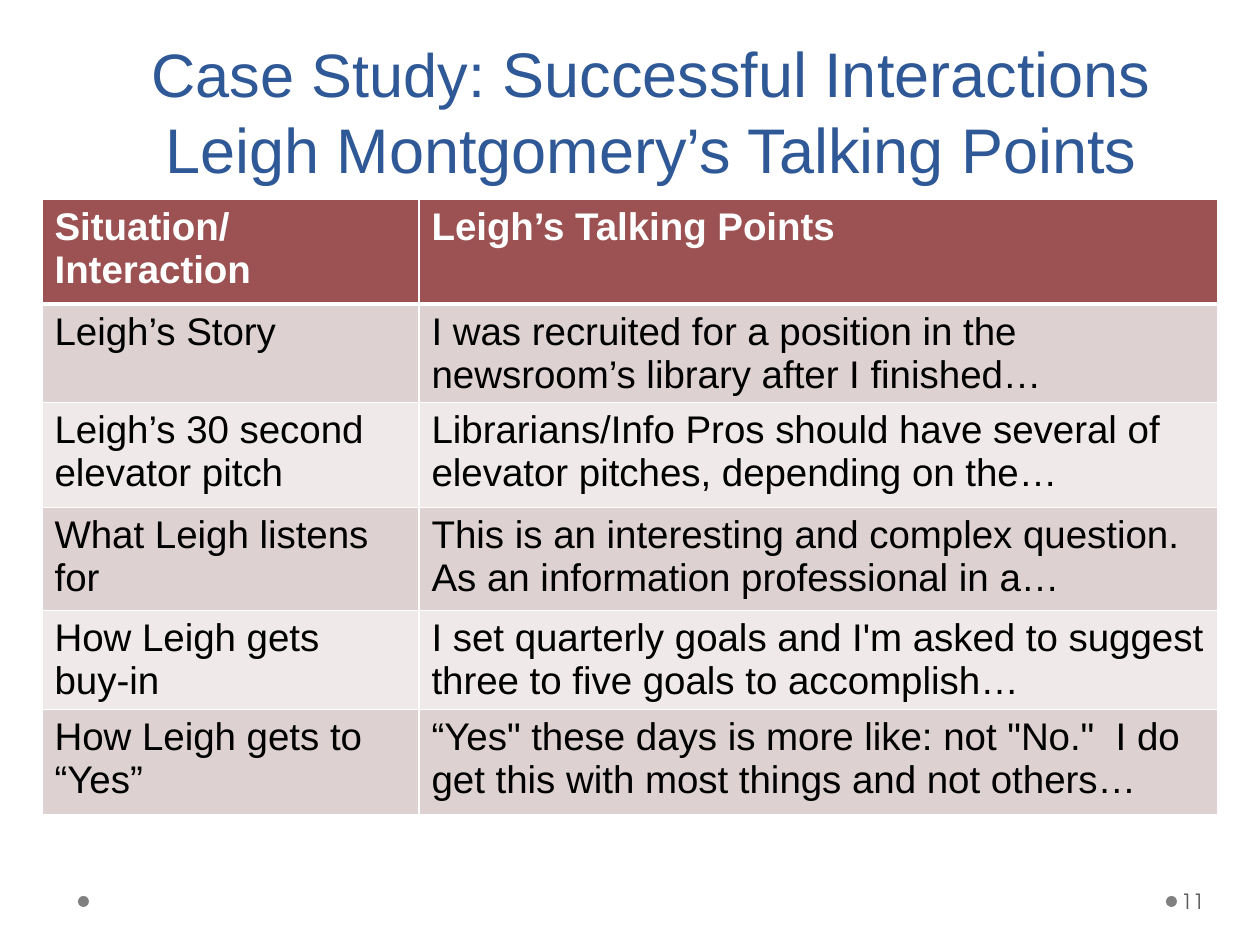
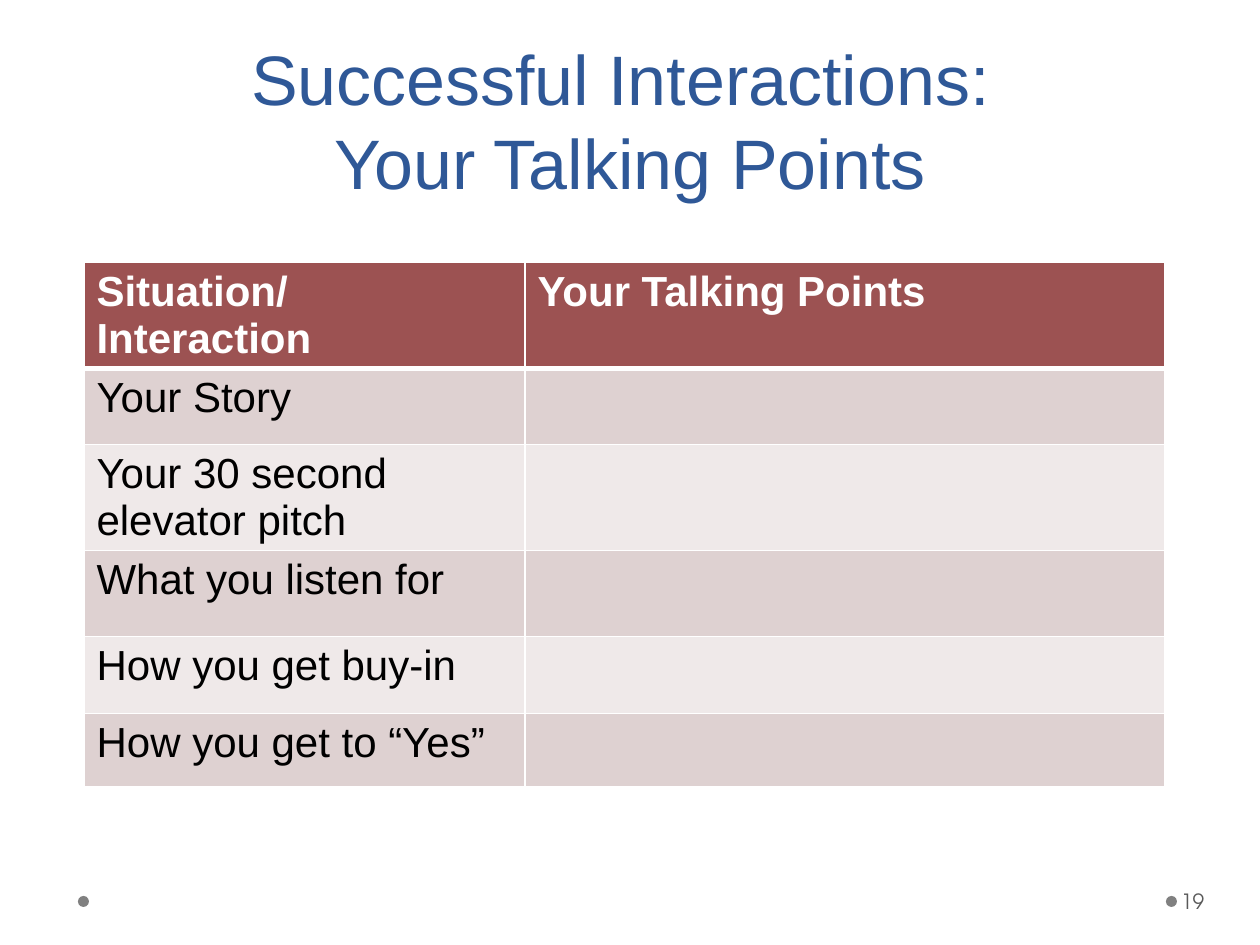
from lxml import etree
from pptx import Presentation
from pptx.dml.color import RGBColor
from pptx.enum.shapes import MSO_SHAPE
from pptx.enum.text import MSO_ANCHOR, MSO_AUTO_SIZE, PP_ALIGN
from pptx.oxml.ns import qn
from pptx.util import Emu, Pt

OVAL = MSO_SHAPE.OVAL
BOTTOM, MIDDLE = MSO_ANCHOR.BOTTOM, MSO_ANCHOR.MIDDLE
CENTER = PP_ALIGN.CENTER
FIXED = MSO_AUTO_SIZE.NONE

BLUE = RGBColor(0x2F, 0x58, 0x97)
RED = RGBColor(0x9C, 0x52, 0x52)
ROSE = RGBColor(0xDE, 0xD1, 0xD1)
PALE = RGBColor(0xEF, 0xE9, 0xE9)
WHITE = RGBColor(0xFF, 0xFF, 0xFF)
BLACK = RGBColor(0, 0, 0)
GREY = RGBColor(0x80, 0x80, 0x80)
DARK = RGBColor(0x59, 0x59, 0x59)

SCALE = 914400 / 126


def px(*nums):
    return [Emu(round(num * SCALE)) for num in nums]


def write(par, text, size=12, color=BLACK, font="Arial", bold=False):
    for index, line in enumerate(text.split("\n")):
        if index:
            par.add_line_break()
        run = par.add_run()
        run.text = line
        run.font.size = Pt(size)
        run.font.name = font
        run.font.bold = bold
        run.font.color.rgb = color


PAGES = [
    {
        "number": "11",
        "title": [("Case Study: ", 35),
                  ("Successful Interactions\nLeigh Montgomery’s Talking Points", 36)],
        "pitch": 43.4,
        "box": (21, 0, 1260, 192),
        "spot": (42, 199),
        "cols": (377, 799),
        "rows": (105, 98, 105, 103, 98, 105),
        "size": 22,
        "cells": [
            ("Situation/ Interaction", "Leigh’s Talking Points"),
            ("Leigh’s Story",
             "I was recruited for a position in the newsroom’s library after I finished…"),
            ("Leigh’s 30 second elevator pitch",
             "Librarians/Info Pros should have several of elevator pitches, depending on the…"),
            ("What Leigh listens for",
             "This is an interesting and complex question. As an information professional in a…"),
            ("How Leigh gets\nbuy-in",
             "I set quarterly goals and I'm asked to suggest three to five goals to accomplish…"),
            ("How Leigh gets to “Yes”",
             "“Yes\" these days is more like: not \"No.\"  I do get this with most things and not others…"),
        ],
    },
    {
        "number": "19",
        "title": [("Successful Interactions: \nYour Talking Points", 40)],
        "pitch": 48,
        "box": (0, 53, 1260, 157),
        "spot": (84, 262),
        "cols": (441, 640),
        "rows": (105, 76, 105, 86, 77, 73),
        "size": 24,
        "cells": [
            ("Situation/ Interaction", "Your Talking Points"),
            ("Your Story", ""),
            ("Your 30 second elevator pitch", ""),
            ("What you listen for", ""),
            ("How you get buy-in", ""),
            ("How you get to “Yes”", ""),
        ],
    },
]

deck = Presentation()
deck.slide_width, deck.slide_height = px(1260, 945)

for page in PAGES:
    slide = deck.slides.add_slide(deck.slide_layouts[5])

    for left in (1166, 78):
        dot = slide.shapes.add_shape(OVAL, *px(left, 896, 11, 11))
        dot.shadow.inherit = False
        dot.fill.solid()
        dot.fill.fore_color.rgb = GREY
        dot.line.fill.background()

    title = slide.shapes.title
    title.left, title.top, title.width, title.height = px(*page["box"])
    frame = title.text_frame
    frame.auto_size = FIXED
    frame.word_wrap = True
    frame.vertical_anchor = BOTTOM
    head = frame.paragraphs[0]
    head.alignment = CENTER
    head.line_spacing = Pt(page["pitch"])
    for text, size in page["title"]:
        write(head, text, size=size, color=BLUE)

    cols, rows = page["cols"], page["rows"]
    area = px(*page["spot"], sum(cols), sum(rows))
    table = slide.shapes.add_table(len(rows), len(cols), *area).table
    for col, width in zip(table.columns, px(*cols)):
        col.width = width
    for row, height in zip(table.rows, px(*rows)):
        row.height = height

    for r, texts in enumerate(page["cells"]):
        for c, text in enumerate(texts):
            cell = table.cell(r, c)
            props = cell._tc.get_or_add_tcPr()
            for side in "LRTB":
                thick = (r, side) in ((0, "B"), (1, "T"))
                line = etree.SubElement(props, qn("a:ln" + side), w=str(Pt(3 if thick else 1)))
                fill = etree.SubElement(line, qn("a:solidFill"))
                etree.SubElement(fill, qn("a:srgbClr"), val=str(WHITE))
            cell.fill.solid()
            cell.fill.fore_color.rgb = RED if r == 0 else ROSE if r % 2 else PALE
            if text:
                write(cell.text_frame.paragraphs[0], text, size=page["size"],
                      color=BLACK if r else WHITE, bold=r == 0)

    label = slide.shapes.add_textbox(*px(1177, 876, 77, 50)).text_frame
    label.word_wrap = True
    label.vertical_anchor = MIDDLE
    label.margin_left, label.margin_right = px(4, 6)
    write(label.paragraphs[0], page["number"], color=DARK, font="TeX Gyre Adventor")

deck.save("out.pptx")
